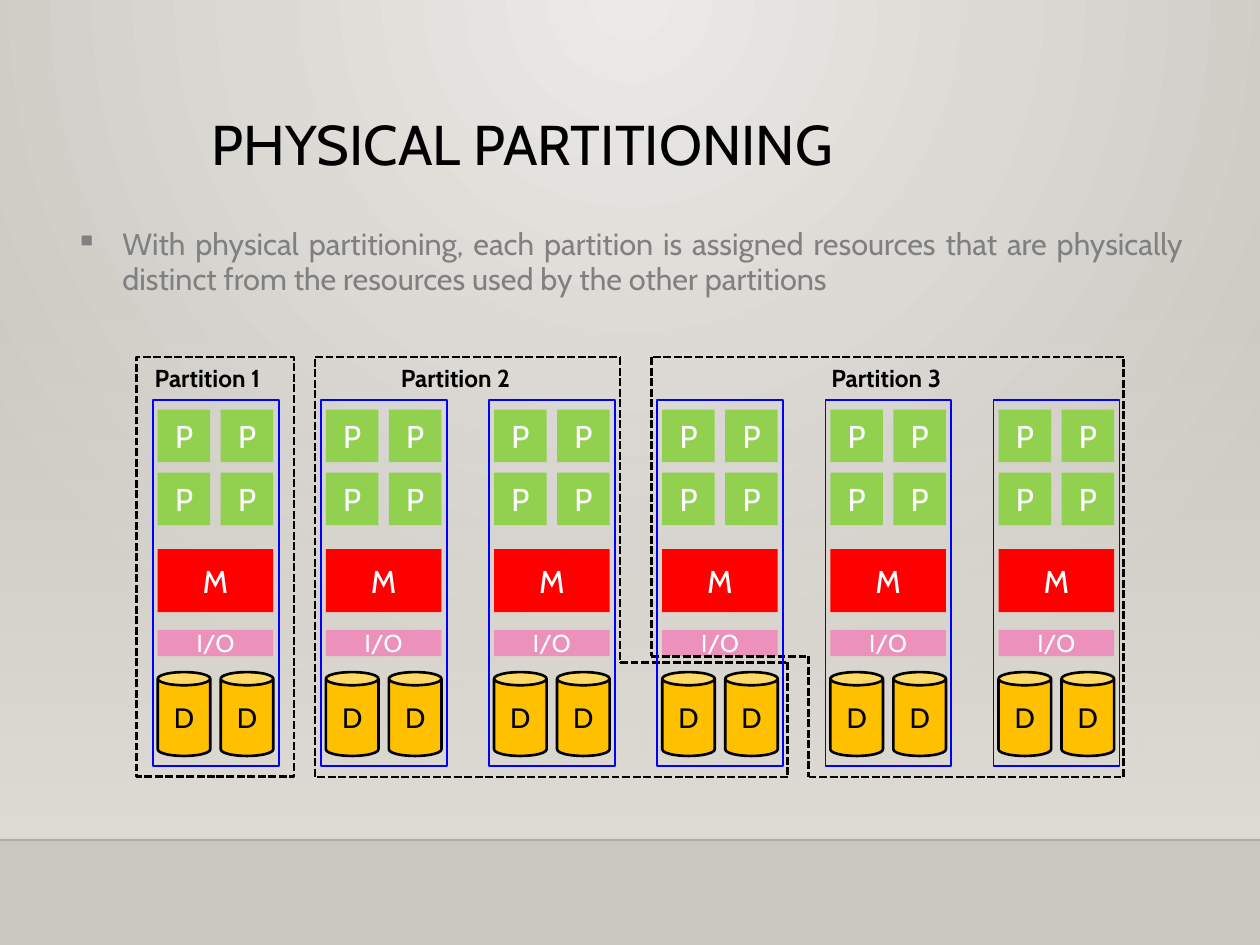
from dataclasses import dataclass
from itertools import pairwise, product

from lxml import etree
from pptx import Presentation
from pptx.dml.color import RGBColor
from pptx.enum.dml import MSO_LINE
from pptx.enum.shapes import MSO_CONNECTOR, MSO_SHAPE
from pptx.enum.text import MSO_ANCHOR, PP_ALIGN
from pptx.oxml.ns import qn
from pptx.util import Cm, Pt

RECTANGLE = MSO_SHAPE.RECTANGLE
CAN = MSO_SHAPE.CAN
STRAIGHT = MSO_CONNECTOR.STRAIGHT
DASH = MSO_LINE.SQUARE_DOT
MIDDLE = MSO_ANCHOR.MIDDLE
TOP = MSO_ANCHOR.TOP
CENTER = PP_ALIGN.CENTER
JUSTIFY = PP_ALIGN.JUSTIFY
LEFT = PP_ALIGN.LEFT


@dataclass(frozen=True)
class Theme:
    font: str = "Cabin"
    black: str = "000000"
    white: str = "FFFFFF"
    grey: str = "808080"
    glow: str = "ECEAE7"
    backdrop: str = "CAC7C1"
    wall: str = "DFDBD5"
    processor: str = "92D050"
    memory: str = "FF0000"
    channel: str = "EB91BB"
    disk: str = "FFC000"
    frame: str = "0000FF"
    title_size: float = 32
    body_size: float = 17.5
    unit_size: float = 18
    disk_size: float = 16
    small_size: float = 14


theme = Theme()
deck = Presentation()
deck.slide_width, deck.slide_height = Cm(25.4), Cm(19.05)
page = deck.slides.add_slide(deck.slide_layouts[6])


def add_block(kind, left, top, width, height, fill=None, line=None, weight=1.5):
    block = page.shapes.add_shape(kind, Cm(left), Cm(top), Cm(width), Cm(height))
    block.shadow.inherit = False
    if fill:
        block.fill.solid()
        block.fill.fore_color.rgb = RGBColor.from_string(fill)
    else:
        block.fill.background()
    if line:
        block.line.color.rgb = RGBColor.from_string(line)
        block.line.width = Pt(weight)
    else:
        block.line.fill.background()
    return block


def write(box, text, size, color, align=LEFT, anchor=TOP, wrap=False, bold=False):
    frame = box.text_frame
    frame.word_wrap = wrap
    frame.vertical_anchor = anchor
    para = frame.paragraphs[0]
    para.alignment = align
    span = para.add_run()
    span.text = text
    span.font.name = theme.font
    span.font.size = Pt(size)
    span.font.bold = bold
    span.font.color.rgb = RGBColor.from_string(color)
    return para


backdrop = page.background.fill
backdrop.gradient()
for stop, color in zip(backdrop.gradient_stops, (theme.glow, theme.backdrop)):
    stop.color.rgb = RGBColor.from_string(color)
gradient = page.element.find(".//" + qn("a:gradFill"))
gradient.remove(gradient.find(qn("a:lin")))
circle = etree.SubElement(gradient, qn("a:path"), {"path": "circle"})
etree.SubElement(circle, qn("a:fillToRect"), {"l": "43000", "r": "43000", "b": "100000"})

wall = add_block(RECTANGLE, 0, 5.6, 25.4, 11.33)
wall.fill.gradient()
wall.fill.gradient_angle = 270
for stop in wall.fill.gradient_stops:
    stop.color.rgb = RGBColor.from_string(theme.wall)
clear_color = wall.element.spPr.find(".//" + qn("a:srgbClr"))
etree.SubElement(clear_color, qn("a:alpha"), {"val": "0"})

floor_line = page.shapes.add_connector(STRAIGHT, 0, Cm(16.93), Cm(25.4), Cm(16.93))
floor_line.line.color.rgb = RGBColor.from_string(theme.black)
floor_line.line.width = Pt(1)
line_color = floor_line.element.spPr.find(".//" + qn("a:srgbClr"))
etree.SubElement(line_color, qn("a:alpha"), {"val": "20000"})
etree.SubElement(floor_line.element.spPr, qn("a:effectLst"))

title = page.shapes.add_textbox(Cm(4.01), Cm(2.24), Cm(18.26), Cm(2.92))
para = write(title, "PHYSICAL PARTITIONING", theme.title_size, theme.black, wrap=True)
para.line_spacing = 0.9

UNIT = 1.06
UNIT_PITCH = 1.27
BOARD_WIDTH = UNIT_PITCH + UNIT
columns = [3.18 + 3.39 * index for index in range(6)]
for left in columns:
    parts = [
        (RECTANGLE, left + UNIT_PITCH * across, 8.26 + UNIT_PITCH * down, UNIT, UNIT,
         theme.processor, None, "P", theme.unit_size, theme.white)
        for down, across in product(range(2), repeat=2)
    ]
    parts += [
        (RECTANGLE, left, 11.07, BOARD_WIDTH, 1.27,
         theme.memory, None, "M", theme.unit_size, theme.white),
        (RECTANGLE, left, 12.7, BOARD_WIDTH, 0.53,
         theme.channel, None, "I/O", theme.small_size, theme.white),
    ]
    parts += [
        (CAN, left + UNIT_PITCH * across, 13.55, UNIT, 1.69,
         theme.disk, theme.black, "D", theme.disk_size, theme.black)
        for across in range(2)
    ]
    for *look, text, size, color in parts:
        write(add_block(*look), text, size, color, CENTER, MIDDLE)

TOP_EDGE, BOTTOM_EDGE = 7.2, 15.66
partition_1 = add_block(RECTANGLE, 2.75, TOP_EDGE, 3.18, BOTTOM_EDGE - TOP_EDGE,
                        line=theme.black)
partition_1.line.dash_style = DASH

outlines = [
    [(6.35, BOTTOM_EDGE), (6.35, TOP_EDGE), (12.5, TOP_EDGE), (12.5, 13.35),
     (15.88, 13.35), (15.88, BOTTOM_EDGE), (6.35, BOTTOM_EDGE)],
    [(13.13, TOP_EDGE), (13.13, 13.23), (16.3, 13.23), (16.3, BOTTOM_EDGE),
     (22.65, BOTTOM_EDGE), (22.65, TOP_EDGE), (13.13, TOP_EDGE)],
]
for outline in outlines:
    for start, end in pairwise(outline):
        edge = page.shapes.add_connector(STRAIGHT, *map(Cm, start + end))
        edge.line.color.rgb = RGBColor.from_string(theme.black)
        edge.line.width = Pt(1.5)
        edge.line.dash_style = DASH
        etree.SubElement(edge.element.spPr, qn("a:effectLst"))

for number, left in enumerate((2.87, 7.83, 16.51), start=1):
    label = page.shapes.add_textbox(Cm(left), Cm(TOP_EDGE), Cm(2.95), Cm(0.86))
    write(label, f"Partition {number}", theme.small_size, theme.black, bold=True)

body = page.shapes.add_textbox(Cm(1.27), Cm(4.45), Cm(22.86), Cm(2.34))
para = write(
    body,
    "With physical partitioning, each partition is assigned resources that are physically "
    "distinct from the resources used by the other partitions",
    theme.body_size, theme.grey, JUSTIFY, wrap=True,
)
para.line_spacing = 0.97
properties = para._p.get_or_add_pPr()
properties.set("marL", str(Cm(0.95)))
properties.set("indent", str(Cm(-0.95)))
etree.SubElement(properties, qn("a:buChar"), {"char": "▪"})

for left in columns:
    add_block(RECTANGLE, left - 0.1, 8.06, 2.54, 7.39, line=theme.frame, weight=1)

deck.save("out.pptx")
